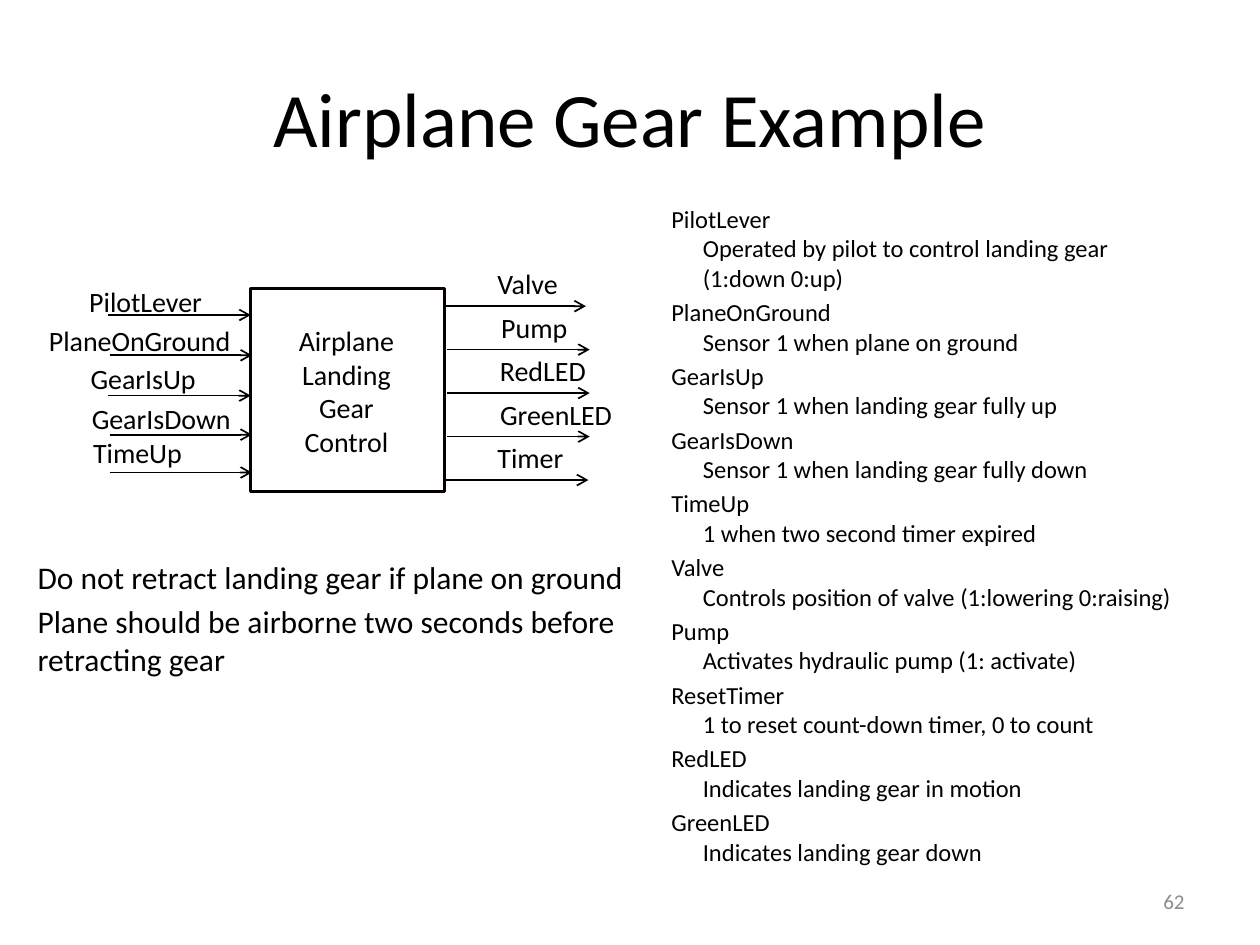
from dataclasses import dataclass

from lxml.etree import SubElement
from pptx import Presentation
from pptx.dml.color import RGBColor
from pptx.enum.shapes import MSO_CONNECTOR, MSO_SHAPE
from pptx.enum.text import MSO_ANCHOR, PP_ALIGN
from pptx.oxml.ns import qn
from pptx.util import Inches, Pt


@dataclass(frozen=True)
class Theme:
    font: str = "Calibri"
    ink: RGBColor = RGBColor(0, 0, 0)
    outline: RGBColor = RGBColor(6, 0, 0)
    muted: RGBColor = RGBColor(0x8C, 0x8C, 0x8C)
    title: int = 44
    rules: int = 18
    label: int = 16
    glossary: int = 14
    number: int = 12


THEME = Theme()

# name, label left, label top, label width, arrow start, arrow y (within the diagram)
INPUTS = [
    ("PilotLever", 0.32, 0.14, 1.11, 0.57, 0.43),
    ("PlaneOnGround", 0, 0.45, 1.66, 0.58, 0.75),
    ("GearIsUp", 0.33, 0.75, 1.05, 0.57, 1.07),
    ("GearIsDown", 0.34, 1.07, 1.32, 0.58, 1.38),
    ("TimeUp", 0.35, 1.34, 0.92, 0.58, 1.68),
]
# name, label left, label width, arrow start; rows are evenly spaced
OUTPUTS = [
    ("Valve", 3.56, 0.7, 3.23),
    ("Pump", 3.59, 0.73, 3.26),
    ("RedLED", 3.58, 0.9, 3.26),
    ("GreenLED", 3.58, 1.11, 3.26),
    ("Timer", 3.56, 0.73, 3.25),
]
OUTPUT_TOP, OUTPUT_PITCH = 0.36, 0.345
ARROW_LENGTH = 1.13

GLOSSARY = [
    ("PilotLever", "Operated by pilot to control landing gear\n(1:down 0:up)"),
    ("PlaneOnGround", "Sensor 1 when plane on ground"),
    ("GearIsUp", "Sensor 1 when landing gear fully up"),
    ("GearIsDown", "Sensor 1 when landing gear fully down"),
    ("TimeUp", "1 when two second timer expired"),
    ("Valve", "Controls position of valve (1:lowering 0:raising)"),
    ("Pump", "Activates hydraulic pump (1: activate)"),
    ("ResetTimer", "1 to reset count-down timer, 0 to count"),
    ("RedLED", "Indicates landing gear in motion"),
    ("GreenLED", "Indicates landing gear down"),
]
RULES = [
    "Do not retract landing gear if plane on ground",
    "Plane should be airborne two seconds before retracting gear",
]


def add_text(s, box, paragraphs, size, color=THEME.ink, align=PP_ALIGN.LEFT,
             anchor=MSO_ANCHOR.TOP, wrap=True, margin=0, indent=0):
    """Add a text box; margin and indent are paragraph values in inches."""
    tf = s.shapes.add_textbox(*map(Inches, box)).text_frame
    tf.word_wrap = wrap
    tf.vertical_anchor = anchor
    for i, text in enumerate(paragraphs):
        p = tf.add_paragraph() if i else tf.paragraphs[0]
        p.text = text
        p.alignment = align
        p.space_before = Pt(0.2 * size)
        p.font.name, p.font.size = THEME.font, Pt(size)
        p.font.color.rgb = color
        if margin:
            p_pr = p._p.get_or_add_pPr()
            p_pr.set("marL", str(Inches(margin)))
            p_pr.set("indent", str(Inches(indent)))


def add_arrow(s, x, y):
    line = s.shapes.add_connector(MSO_CONNECTOR.STRAIGHT, Inches(x), Inches(y),
                                  Inches(x + ARROW_LENGTH), Inches(y))
    line.line.color.rgb = THEME.ink
    line.line.width = Pt(1)
    SubElement(line.line._get_or_add_ln(), qn("a:tailEnd"), type="arrow")
    SubElement(line._element.spPr, qn("a:effectLst"))


def add_signal(s, name, label_box, arrow_x, arrow_y):
    add_arrow(s, arrow_x, arrow_y)
    add_text(s, label_box, [name], THEME.label, wrap=False)


def add_controller(s, x, y, w, h):
    block = s.shapes.add_shape(MSO_SHAPE.RECTANGLE, *map(Inches, (x, y, w, h)))
    block.shadow.inherit = False
    block.fill.background()
    block.line.color.rgb = THEME.outline
    block.line.width = Pt(2)
    add_text(s, (x - 0.18, y + 0.23, 1.5, 1.18), ["Airplane Landing Gear Control"],
             THEME.label, align=PP_ALIGN.CENTER, margin=0.38)


def add_diagram(s, left, top):
    """Controller block with its inputs on the left and outputs on the right."""
    add_controller(s, left + 1.7, top + 0.22, 1.54, 1.61)
    for name, x, y, w, arrow_x, arrow_y in INPUTS:
        add_signal(s, name, (left + x, top + y, w, 0.37), left + arrow_x, top + arrow_y)
    for i, (name, x, w, arrow_x) in enumerate(OUTPUTS):
        y = top + i * OUTPUT_PITCH
        add_signal(s, name, (left + x, y, w, 0.37), left + arrow_x, y + OUTPUT_TOP)


def add_glossary(s, box):
    add_text(s, box, [f"{name}\n{meaning}" for name, meaning in GLOSSARY],
             THEME.glossary, margin=0.25, indent=-0.25)


def main():
    prs = Presentation()
    prs.slide_width, prs.slide_height = Inches(10), Inches(7.5)
    s = prs.slides.add_slide(prs.slide_layouts[6])
    add_text(s, (0.5, 0.3, 9, 1.25), ["Airplane Gear Example"], THEME.title,
             align=PP_ALIGN.CENTER, anchor=MSO_ANCHOR.MIDDLE)
    add_diagram(s, 0.29, 2.07)
    add_glossary(s, (5.23, 1.57, 4.77, 5.47))
    add_text(s, (0.2, 4.38, 5.03, 1.43), RULES, THEME.rules)
    add_text(s, (7.17, 6.95, 2.33, 0.4), ["62"], THEME.number, THEME.muted,
             PP_ALIGN.RIGHT, MSO_ANCHOR.MIDDLE)
    prs.save("out.pptx")


if __name__ == "__main__":
    main()
